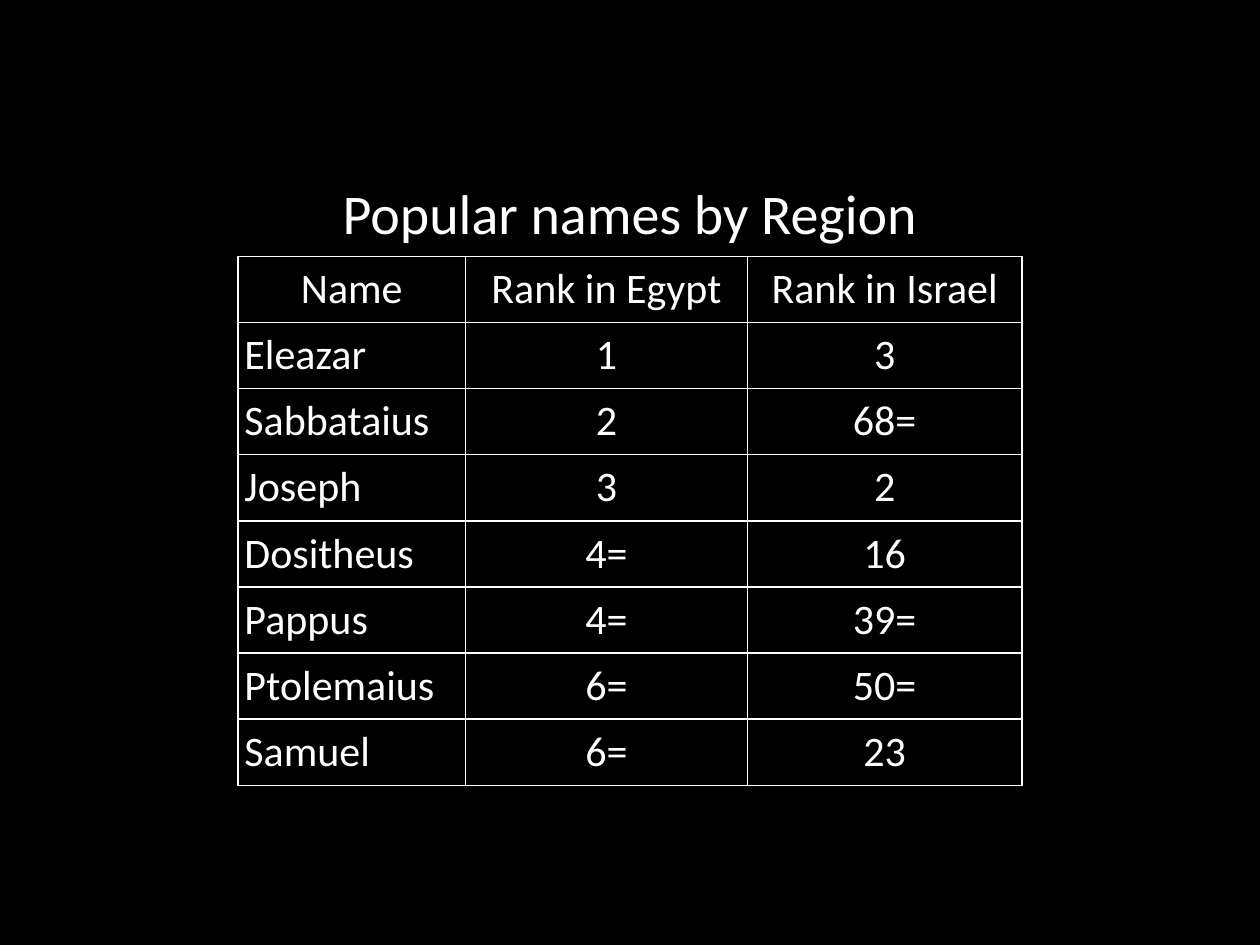
from lxml import etree
from pptx import Presentation, util as u
from pptx.dml.color import RGBColor
from pptx.enum import text as t
from pptx.oxml.ns import qn

WHITE, BLACK = "FFFFFF", "000000"
TITLE = "Popular names by Region"
ROWS = [
    ("Name", "Rank in Egypt", "Rank in Israel"),
    ("Eleazar", "1", "3"),
    ("Sabbataius", "2", "68="),
    ("Joseph", "3", "2"),
    ("Dositheus", "4=", "16"),
    ("Pappus", "4=", "39="),
    ("Ptolemaius", "6=", "50="),
    ("Samuel", "6=", "23"),
]


def paint(fill, color):
    fill.solid()
    fill.fore_color.rgb = RGBColor.from_string(color)


def write(cell, words, size=24, color=WHITE, font="Calibri", align="CENTER"):
    cell.vertical_anchor = t.MSO_ANCHOR.MIDDLE
    cell.margin_left = cell.margin_right = u.Inches(0.05)
    cell.margin_top = cell.margin_bottom = u.Inches(0.05)
    para = cell.text_frame.paragraphs[0]
    para.alignment = getattr(t.PP_ALIGN, align)
    run = para.add_run()
    run.text = words
    run.font.size, run.font.name = u.Pt(size), font
    paint(run.font.fill, color)


def border(cell, shown, color=WHITE, width=1):
    """Rule the sides named in shown (of L, R, T, B) and clear the others."""
    props = cell._tc.get_or_add_tcPr()
    for side in "LRTB":
        line = etree.SubElement(props, qn("a:ln" + side), w=str(u.Pt(width)))
        if side in shown:
            fill = etree.SubElement(line, qn("a:solidFill"))
            etree.SubElement(fill, qn("a:srgbClr"), val=color)
        else:
            etree.SubElement(line, qn("a:noFill"))
    cell.fill.background()


def ranks(slide, left, top, width, height):
    """Table with a merged title row above an even grid of names and ranks."""
    box = [u.Inches(n) for n in (left, top, width, height)]
    table = slide.shapes.add_table(len(ROWS) + 1, 3, *box).table
    table.first_row = table.horz_banding = False
    for col, share in zip(table.columns, (0.29, 0.36, 0.35)):
        col.width = u.Inches(width * share)
    head = 0.64
    for i, row in enumerate(table.rows):
        row.height = u.Inches((height - head) / len(ROWS) if i else head)
        for cell in row.cells:
            border(cell, "LRTB" if i else "B")
    table.cell(0, 0).merge(table.cell(0, 2))
    write(table.cell(0, 0), TITLE, size=32)
    for i, row in enumerate(ROWS, 1):
        for j, words in enumerate(row):
            name = i > 1 and j == 0
            write(table.cell(i, j), words, align="LEFT" if name else "CENTER")


def main():
    deck = Presentation()
    deck.slide_width, deck.slide_height = u.Inches(10), u.Inches(7.5)
    slide = deck.slides.add_slide(deck.slide_layouts[6])
    paint(slide.background.fill, BLACK)
    ranks(slide, 1.89, 1.39, 6.22, 4.84)
    deck.save("out.pptx")


if __name__ == "__main__":
    main()
